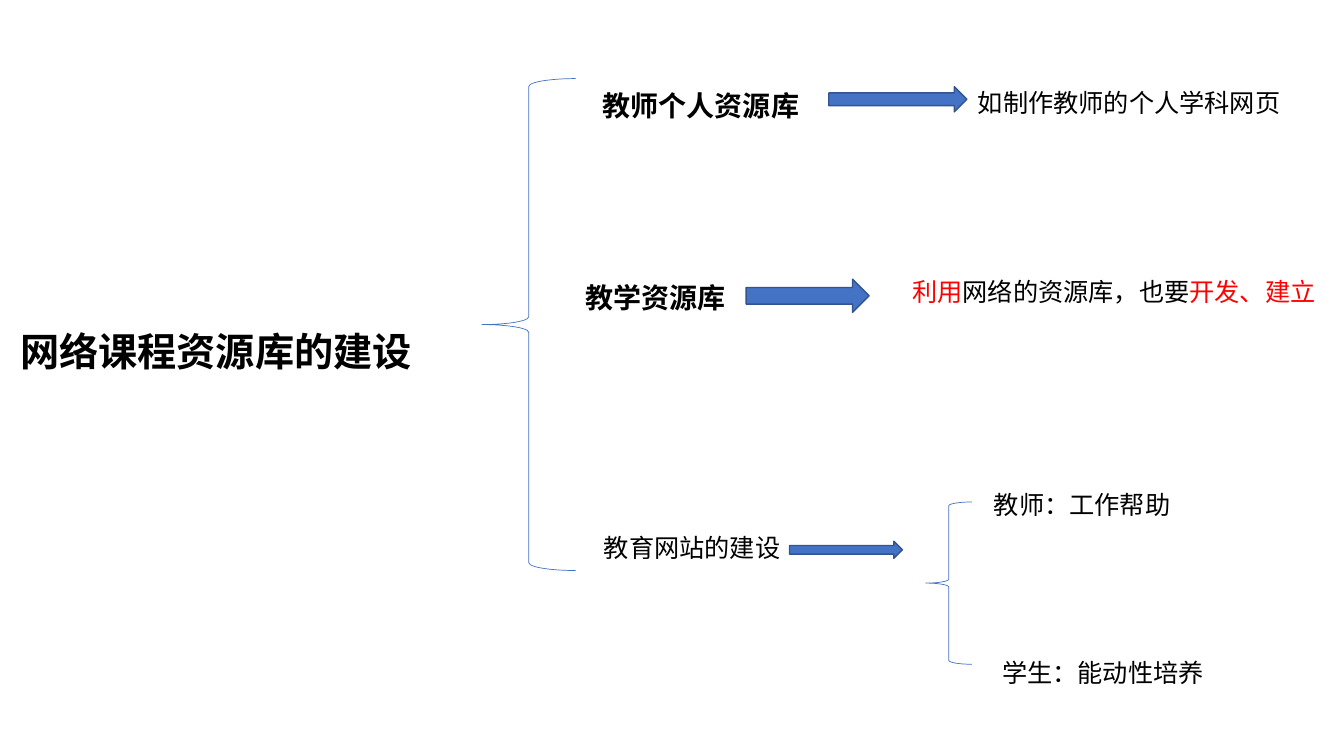
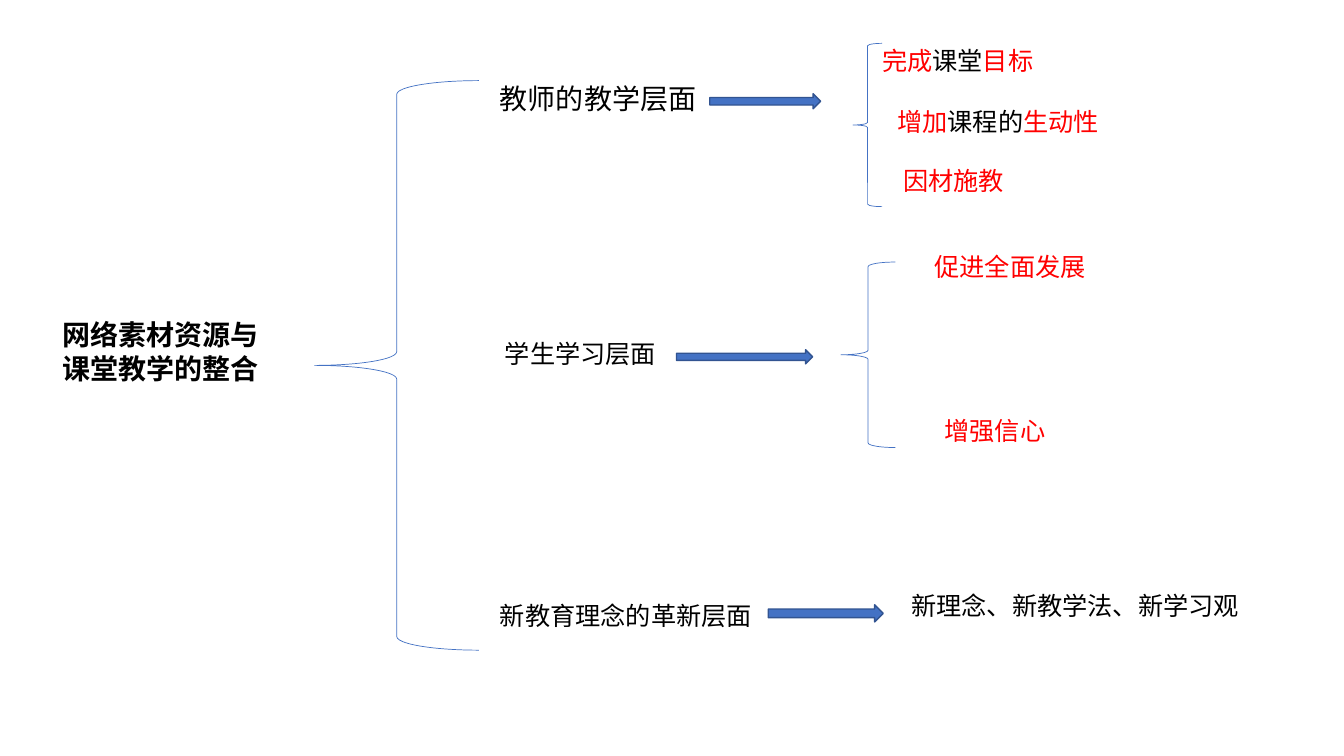
"""Build two brace diagrams on web course resources and classroom teaching."""
import pptx
import pptx.dml.color
import pptx.enum.shapes
import pptx.enum.text
import pptx.oxml.ns
import pptx.util
from pptx.util import Inches

FONT = "Noto Sans CJK SC"
BLACK, RED, BLUE, DARK_BLUE = "000000", "FF0000", "4472C4", "325491"
PRESET = pptx.enum.shapes.MSO_SHAPE

DIAGRAMS = [
    {
        "title": ["网络课程资源库的建设"],
        "title_box": (0.1, 3.2, 4.35, 0.57),
        "title_size": 28,
        "brace": (4.78, 0.78, 0.93, 4.88),
        "branches": [
            {"topic": ("教师个人资源库", 5.88, 0.82, 2.17),
             "size": 20, "bold": True,
             "arrow": (8.22, 0.86, 1.37, 0.25),
             "details": [("如制作教师的个人学科网页", 9.6, 0.82, 3.75)]},
            {"topic": ("教学资源库", 5.71, 2.73, 2.09),
             "size": 20, "bold": True,
             "arrow": (7.4, 2.77, 1.22, 0.33),
             "details": [("*利用*网络的资源库，也要*开发、建立*", 8.95, 2.69, 4.26)]},
            {"topic": ("教育网站的建设", 5.89, 5.23, 1.99),
             "arrow": (7.83, 5.37, 1.12, 0.17),
             "brace": (9.18, 4.98, 0.46, 1.61),
             "details": [("教师：工作帮助", 9.76, 4.8, 2.32),
                         ("学生：能动性培养", 9.84, 6.47, 2.71)]},
        ],
    },
    {
        "title": ["网络素材资源与", "课堂教学的整合"],
        "title_box": (0.52, 3.1, 2.98, 0.77),
        "title_size": 20,
        "brace": (3.12, 0.8, 1.63, 5.65),
        "branches": [
            {"topic": ("教师的教学层面", 4.86, 0.76, 2.22),
             "size": 20,
             "arrow": (7.04, 0.93, 1.1, 0.15),
             "brace": (8.46, 0.43, 0.29, 1.62),
             "details": [("*完成*课堂*目标*", 8.65, 0.4, 1.84),
                         ("*增加*课程的*生动性*", 8.8, 1.01, 2.98),
                         ("*因材施教*", 8.86, 1.59, 2.59)]},
            {"topic": ("学生学习层面", 4.91, 3.31, 2.67),
             "arrow": (6.71, 3.47, 1.35, 0.14),
             "brace": (8.34, 2.6, 0.54, 1.84),
             "details": [("*促进全面发展*", 9.17, 2.44, 1.93),
                         ("*增强信心*", 9.27, 4.07, 1.61)]},
            {"topic": ("新教育理念的革新层面", 4.86, 5.91, 2.73),
             "arrow": (7.62, 6, 1.14, 0.17),
             "details": [("新理念、新教学法、新学习观", 8.94, 5.81, 3.5)]},
        ],
    },
]


def rgb(value):
    """Turn a hex string into a colour."""
    return pptx.dml.color.RGBColor.from_string(value)


def write(holder, lines, size=18, bold=False):
    """Write lines into a text holder, with the parts between asterisks in red."""
    frame = holder.text_frame
    frame.word_wrap = True
    frame.auto_size = pptx.enum.text.MSO_AUTO_SIZE.NONE
    frame.vertical_anchor = pptx.enum.text.MSO_ANCHOR.MIDDLE
    for index, line in enumerate(lines):
        paragraph = frame.add_paragraph() if index else frame.paragraphs[0]
        paragraph.alignment = pptx.enum.text.PP_ALIGN.LEFT
        if len(lines) > 1:
            paragraph.line_spacing = pptx.util.Pt(size * 1.2)
        for position, part in enumerate(line.split("*")):
            if not part:
                continue
            run = paragraph.add_run()
            run.text = part
            run.font.name = FONT
            run.font.size = pptx.util.Pt(size)
            run.font.bold = bold
            run.font.color.rgb = rgb(RED if position % 2 else BLACK)
            east_asian = run.font._element.makeelement(
                pptx.oxml.ns.qn("a:ea"), {"typeface": FONT})
            run.font._element.find(pptx.oxml.ns.qn("a:latin")).addnext(east_asian)


def add_label(slide, label, size=18, bold=False):
    """Add a one-line label whose height follows its text size."""
    text, left, top, width = label
    height = 0.04 + size * 0.02
    box = slide.shapes.add_textbox(*map(Inches, (left, top, width, height)))
    write(box, [text], size=size, bold=bold)


def add_outline(slide, preset, box, line, weight, fill=None):
    """Add a preset shape with a line and an optional fill."""
    shape = slide.shapes.add_shape(preset, *map(Inches, box))
    shape.shadow.inherit = False
    shape.line.color.rgb = rgb(line)
    shape.line.width = pptx.util.Pt(weight)
    if fill:
        shape.fill.solid()
        shape.fill.fore_color.rgb = rgb(fill)
    else:
        shape.fill.background()


def add_brace(slide, box):
    """Add a thin brace that opens to the right."""
    add_outline(slide, PRESET.LEFT_BRACE, box, BLUE, 0.5)


def add_branch(slide, branch):
    """Add a topic, its arrow and its details."""
    add_label(slide, branch["topic"], size=branch.get("size", 18),
              bold=branch.get("bold", False))
    add_outline(slide, PRESET.RIGHT_ARROW, branch["arrow"], DARK_BLUE, 1, fill=BLUE)
    if "brace" in branch:
        add_brace(slide, branch["brace"])
    for detail in branch["details"]:
        add_label(slide, detail)


def add_diagram(deck, diagram):
    """Add a slide with a title, a main brace and its branches."""
    slide = deck.slides.add_slide(deck.slide_layouts[5])
    title = slide.shapes.title
    title.left, title.top, title.width, title.height = map(Inches, diagram["title_box"])
    write(title, diagram["title"], size=diagram["title_size"], bold=True)
    add_brace(slide, diagram["brace"])
    for branch in diagram["branches"]:
        add_branch(slide, branch)


def main():
    """Build and save the deck."""
    deck = pptx.Presentation()
    deck.slide_width, deck.slide_height = Inches(13.33), Inches(7.5)
    for diagram in DIAGRAMS:
        add_diagram(deck, diagram)
    deck.save("out.pptx")


if __name__ == "__main__":
    main()
